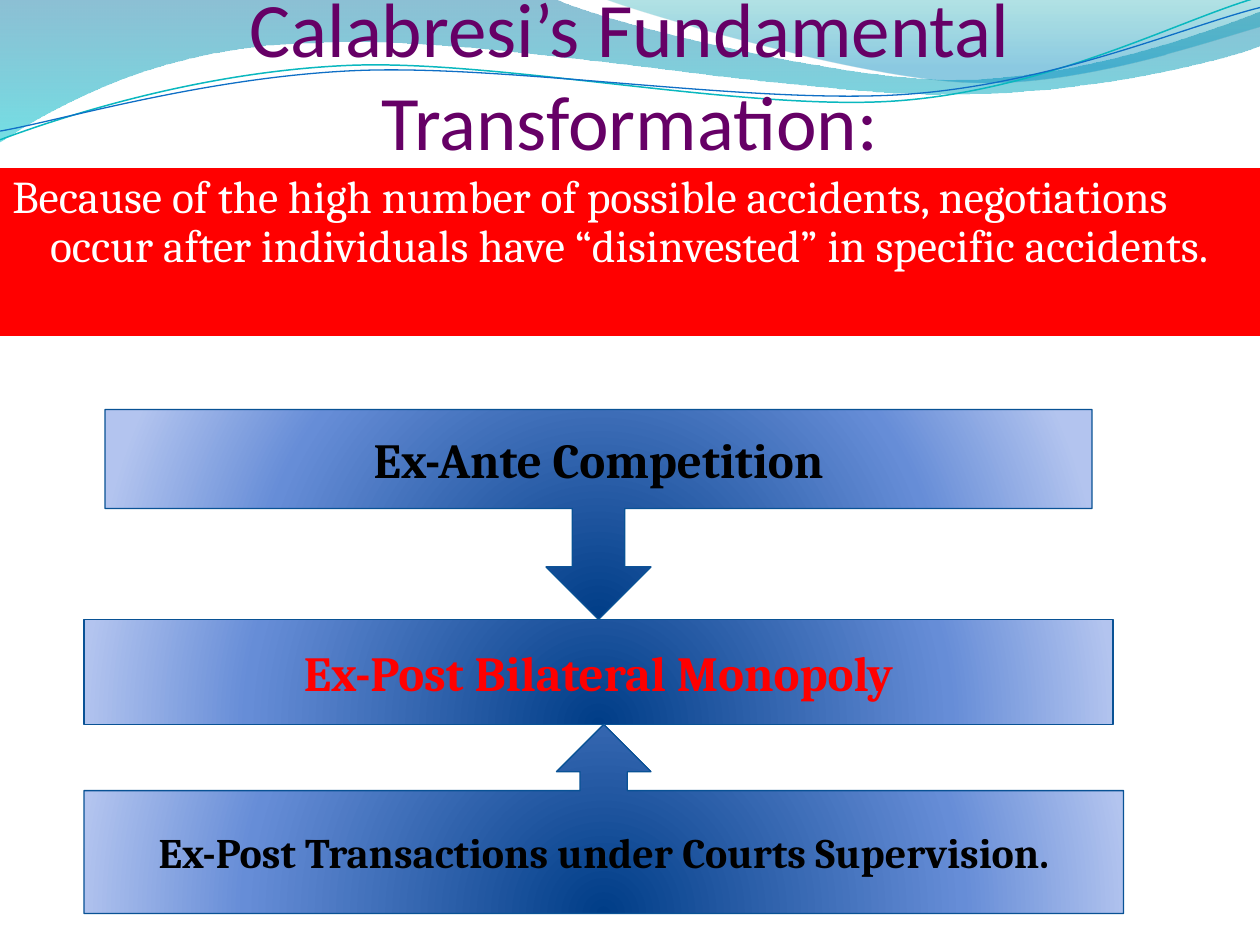
import pptx
import pptx.dml.color
import pptx.enum.shapes
import pptx.enum.text
import pptx.oxml
import pptx.oxml.ns
import pptx.util

Pt = pptx.util.Pt
RGBColor = pptx.dml.color.RGBColor
SHAPE = pptx.enum.shapes.MSO_SHAPE
ANCHOR = pptx.enum.text.MSO_ANCHOR
ALIGN = pptx.enum.text.PP_ALIGN
qn = pptx.oxml.ns.qn
NS = pptx.oxml.ns.nsdecls("a")

WHITE = RGBColor(0xFF, 0xFF, 0xFF)
BLACK = RGBColor(0, 0, 0)
RED = RGBColor(0xFF, 0, 0)
PURPLE = RGBColor(0x66, 0, 0x66)
BOX_LINE = RGBColor(0x09, 0x52, 0x95)
TEAL = RGBColor(0x0A, 0xB8, 0xBF)
BLUE = RGBColor(0x0F, 0x6F, 0xC6)

# Gradient stops: position, colour, opacity (all but colour in percent)
BOX_STOPS = [(0, RGBColor(0, 0x3D, 0x87), 100),
             (68, RGBColor(0x66, 0x8D, 0xD7), 100),
             (100, RGBColor(0xB3, 0xC4, 0xEF), 100)]
LEFT_STOPS = [(0, RGBColor(0, 0x74, 0xA1), 45), (100, RGBColor(0, 0xC6, 0xCF), 55)]
RIGHT_STOPS = [(0, RGBColor(0, 0xA1, 0xA9), 30), (80, RGBColor(0, 0x8B, 0xBF), 45)]
DOWNWARD = '<a:lin ang="5400000" scaled="0"/>'
FROM_BELOW = ('<a:path path="circle"><a:fillToRect l="50000" t="130000" '
              'r="50000" b="-30000"/></a:path>')

# Wave outlines in points: one pair ends a straight step,
# three pairs are two control points and the end of a Bezier curve
LEFT_WAVE = [[(0, -0.7)], [(316.8, -0.7)],
             [(342.7, 12.2), (478.1, 45.4), (545.8, 45.4)],
             [(614.2, 45.4), (689.8, 18.7), (720, 6.5)], [(720.7, 25.9)],
             [(707.8, 31.7), (626.4, 54.7), (537.1, 54)],
             [(447.8, 54), (275, 20.2), (185, 24.5)],
             [(92.9, 25.2), (33.1, 59.8), (-0.7, 81.4)]]
RIGHT_WAVE = [[(344.9, -0.7)], [(366.5, 7.9), (491, 44.6), (553.7, 46.8)],
              [(616.3, 49.7), (691.9, 23), (720, 15.1)], [(720, 0)]]
TEAL_WAVE = [[(0, 79.9)], [(34.6, 67), (113.8, 41), (199.4, 37.4)],
             [(284.4, 33.8), (427, 64.1), (513.4, 57.6)],
             [(599.8, 51.1), (675.4, 10.8), (718.6, -1.4)]]
BLUE_WAVE = [[(0, 74.9)], [(33.8, 69.1), (118.1, 43.9), (203.8, 40.3)],
             [(290.2, 36.7), (429.8, 59.8), (516.2, 54)],
             [(601.9, 48.2), (676.8, 15.1), (720, 4.3)]]


def fill_gradient(s, stops, direction):
    gs = "".join(f'<a:gs pos="{pos * 1000}"><a:srgbClr val="{color}">'
                 f'<a:alpha val="{opacity * 1000}"/></a:srgbClr></a:gs>'
                 for pos, color, opacity in stops)
    grad = pptx.oxml.parse_xml(f'<a:gradFill {NS} rotWithShape="1"><a:gsLst>{gs}'
                               f'</a:gsLst>{direction}</a:gradFill>')
    s.fill.background()
    empty = s._element.spPr.find(qn("a:noFill"))
    empty.getparent().replace(empty, grad)


def set_line(s, color, width):
    s.line.color.rgb = color
    s.line.width = Pt(width)


def add_wave(slide, outline, stops=None, line=None):
    # Local units are hundredths of a point
    steps = [[(round(x * 100), round(y * 100)) for x, y in step] for step in outline]
    ends = [step[-1] for step in steps]
    fb = slide.shapes.build_freeform(*ends[0], scale=Pt(1) / 100)
    fb.add_line_segments(ends[1:], close=stops is not None)
    s = fb.convert_to_shape()

    # Bend the straight segments that have control points
    left, top = (min(values) for values in zip(*ends))
    segments = list(s._element.iter(qn("a:lnTo")))
    for segment, step in zip(segments, steps[1:]):
        if len(step) == 3:
            pts = "".join(f'<a:pt x="{x - left}" y="{y - top}"/>' for x, y in step)
            curve = pptx.oxml.parse_xml(f'<a:cubicBezTo {NS}>{pts}</a:cubicBezTo>')
            segment.getparent().replace(segment, curve)

    s.shadow.inherit = False
    if stops:
        fill_gradient(s, stops, DOWNWARD)
        s.line.fill.background()
    else:
        s.fill.background()
        set_line(s, *line)


def add_shape(slide, kind, box, adjustments=()):
    s = slide.shapes.add_shape(kind, *map(Pt, box))
    s.shadow.inherit = False
    for i, value in enumerate(adjustments):
        s.adjustments[i] = value
    return s


def write_text(s, text, *, size, color, font="Cambria", bold=False, align=ALIGN.CENTER,
               anchor=ANCHOR.MIDDLE, margins=(7.2, 3.6, 7.2, 3.6),
               hanging=0, line_spacing=None, before=0):
    tf = s.text_frame
    tf.word_wrap = True
    tf.vertical_anchor = anchor
    tf.margin_left, tf.margin_top, tf.margin_right, tf.margin_bottom = map(Pt, margins)
    p = tf.paragraphs[0]
    p.alignment = align
    p.line_spacing = line_spacing
    p.space_before = Pt(before)
    if hanging:
        pPr = p._p.get_or_add_pPr()
        pPr.set("marL", str(Pt(hanging)))
        pPr.set("indent", str(-Pt(hanging)))
    r = p.add_run()
    r.text = text
    r.font.name = font
    r.font.size = Pt(size)
    r.font.bold = bold
    r.font.color.rgb = color


def add_stage(slide, kind, box, text, size, color, adjustments=()):
    s = add_shape(slide, kind, box, adjustments)
    fill_gradient(s, BOX_STOPS, FROM_BELOW)
    set_line(s, BOX_LINE, 0.75)
    write_text(s, text, size=size, color=color, bold=True)


def main():
    prs = pptx.Presentation()
    prs.slide_width, prs.slide_height = Pt(720), Pt(540)
    slide = prs.slides.add_slide(prs.slide_layouts[6])

    # Waves along the top
    add_wave(slide, LEFT_WAVE, stops=LEFT_STOPS)
    add_wave(slide, RIGHT_WAVE, stops=RIGHT_STOPS)
    add_wave(slide, TEAL_WAVE, line=(TEAL, 0.85))
    add_wave(slide, BLUE_WAVE, line=(BLUE, 0.75))

    # Title
    title = slide.shapes.add_textbox(Pt(0), Pt(18), Pt(720), Pt(76.5))
    write_text(title, "Calabresi’s Fundamental Transformation:", size=44, color=PURPLE,
               font="Calibri", anchor=ANCHOR.BOTTOM, margins=(0, 3.6, 0, 0))

    # Red statement band
    band = add_shape(slide, SHAPE.RECTANGLE, (0, 96, 720, 96))
    band.fill.solid()
    band.fill.fore_color.rgb = RED
    band.line.fill.background()
    write_text(band, "Because of the high number of possible accidents, negotiations occur "
               "after individuals have “disinvested” in specific accidents.",
               size=26, color=WHITE, align=ALIGN.LEFT, anchor=ANCHOR.TOP,
               hanging=21.6, line_spacing=0.9, before=5.2)

    # Stages of the transformation
    add_stage(slide, SHAPE.DOWN_ARROW_CALLOUT, (60, 234, 564, 120),
              "Ex-Ante Competition", 28, BLACK, (0.25, 0.25, 0.25, 0.472))
    add_stage(slide, SHAPE.RECTANGLE, (48, 354, 588, 60),
              "Ex-Post Bilateral Monopoly", 28, RED)
    add_stage(slide, SHAPE.UP_ARROW_CALLOUT, (48, 414, 594, 108),
              "Ex-Post Transactions under Courts Supervision.", 24, BLACK)

    prs.save("out.pptx")


if __name__ == "__main__":
    main()
